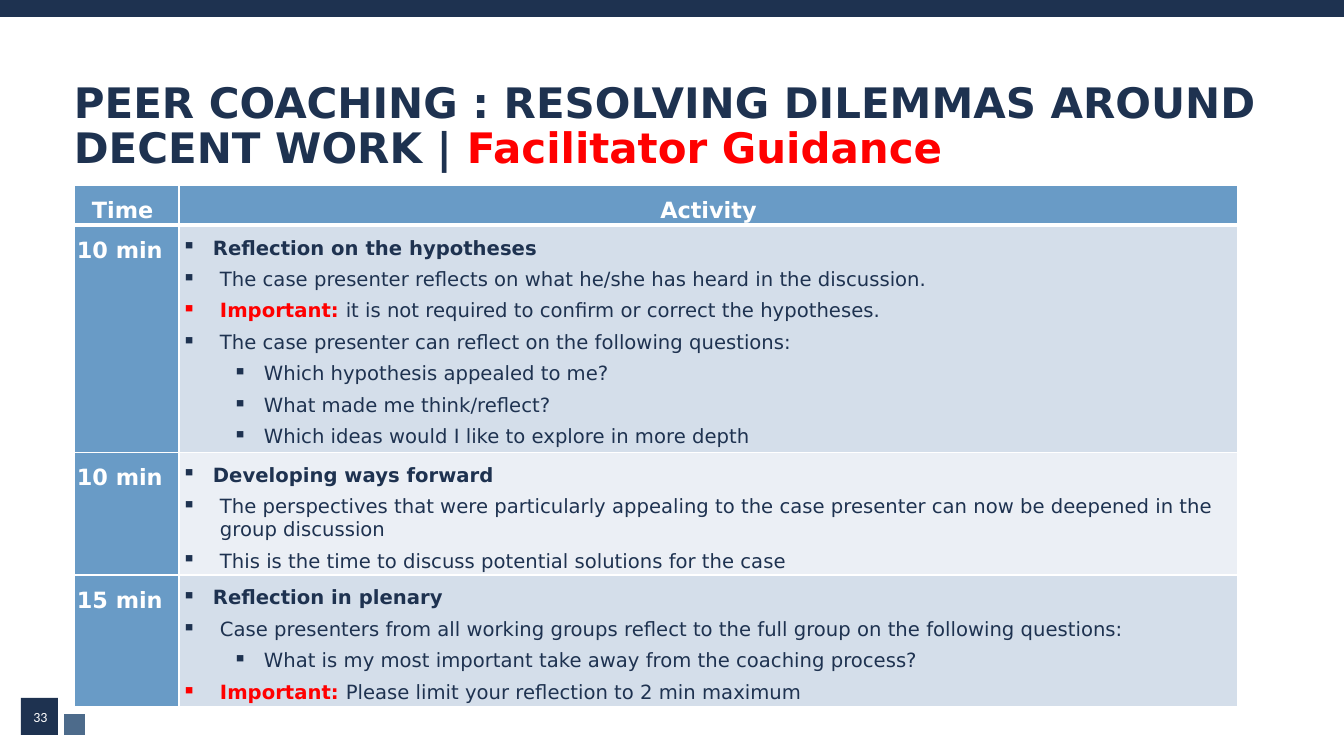
"""Build the facilitator guidance slide for the peer coaching session."""
from dataclasses import dataclass

import lxml.etree
import pptx
import pptx.dml.color
import pptx.enum.shapes
import pptx.enum.text
import pptx.oxml.ns
import pptx.slide
import pptx.table
import pptx.text.text
import pptx.util

PX = 914400 / 100.8
FONT = "DejaVu Sans"
COLORS = {
    "navy": "1E3250",
    "steel": "4D6B8B",
    "blue": "699BC6",
    "band": "D4DEEA",
    "pale": "EBEFF5",
    "red": "FF0000",
    "white": "FFFFFF",
}
ALIGN = pptx.enum.text.PP_ALIGN
ANCHOR = pptx.enum.text.MSO_ANCHOR


@dataclass(frozen=True)
class Block:
    left: int
    top: int
    width: int
    height: int
    color: str = "navy"


@dataclass(frozen=True)
class Point:
    text: str
    lead: str = ""
    level: int = 0


@dataclass(frozen=True)
class Session:
    time: str
    heading: str
    points: tuple[Point, ...]
    height: int
    color: str


DECORATIONS = (
    Block(0, 0, 1344, 17),
    Block(21, 698, 37, 37),
    Block(64, 714, 21, 21, "steel"),
)
TITLE = Block(64, 77, 1232, 67)
PAGE_NUMBER = Block(7, 705, 67, 23, "white")
AGENDA_LEFT, AGENDA_TOP = 74, 185
COLUMN_WIDTHS = (105, 1059)
HEADER_HEIGHT = 32
SESSIONS = (
    Session("10 min", "Reflection on the hypotheses", (
        Point("The case presenter reflects on what he/she has heard in the discussion."),
        Point("it is not required to confirm or correct the hypotheses.", lead="Important: "),
        Point("The case presenter can reflect on the following questions:"),
        Point("Which hypothesis appealed to me?", level=1),
        Point("What made me think/reflect?", level=1),
        Point("Which ideas would I like to explore in more depth", level=1),
    ), 218, "band"),
    Session("10 min", "Developing ways forward", (
        Point("The perspectives that were particularly appealing to the case presenter "
              "can now be deepened in the group discussion"),
        Point("This is the time to discuss potential solutions for the case"),
    ), 119, "pale"),
    Session("15 min", "Reflection in plenary", (
        Point("Case presenters from all working groups reflect to the full group "
              "on the following questions:"),
        Point("What is my most important take away from the coaching process?", level=1),
        Point("Please limit your reflection to 2 min maximum", lead="Important: "),
    ), 126, "band"),
)


def px(length: int) -> int:
    return round(length * PX)


def rgb(color: str) -> pptx.dml.color.RGBColor:
    return pptx.dml.color.RGBColor.from_string(COLORS[color])


def write(paragraph: pptx.text.text._Paragraph, text: str, *, size: int = 14,
          color: str = "navy", bold: bool = False, font: str = FONT) -> None:
    run = paragraph.add_run()
    run.text = text
    run.font.name = font
    run.font.size = pptx.util.Pt(size)
    run.font.bold = bold
    run.font.color.rgb = rgb(color)


def add_block(slide: pptx.slide.Slide, block: Block) -> None:
    shape = slide.shapes.add_shape(
        pptx.enum.shapes.MSO_SHAPE.RECTANGLE,
        px(block.left), px(block.top), px(block.width), px(block.height))
    shape.shadow.inherit = False
    shape.fill.solid()
    shape.fill.fore_color.rgb = rgb(block.color)
    shape.line.fill.background()


def add_text_frame(slide: pptx.slide.Slide, block: Block,
                   anchor: ANCHOR) -> pptx.text.text.TextFrame:
    frame = slide.shapes.add_textbox(
        px(block.left), px(block.top), px(block.width), px(block.height)).text_frame
    frame.word_wrap = True
    frame.vertical_anchor = anchor
    return frame


def style_cell(cell: pptx.table._Cell, color: str, top: int, bottom: int) -> None:
    cell.margin_left = cell.margin_right = px(3)
    cell.margin_top = cell.margin_bottom = 0
    properties = cell._tc.get_or_add_tcPr()
    qn = pptx.oxml.ns.qn
    for side, points in (("L", 1), ("R", 1), ("T", top), ("B", bottom)):
        border = lxml.etree.SubElement(
            properties, qn(f"a:ln{side}"), w=str(pptx.util.Pt(points)))
        fill = lxml.etree.SubElement(border, qn("a:solidFill"))
        lxml.etree.SubElement(fill, qn("a:srgbClr"), val=COLORS["white"])
    cell.fill.solid()
    cell.fill.fore_color.rgb = rgb(color)


def write_label(cell: pptx.table._Cell, text: str, align: ALIGN) -> None:
    paragraph = cell.text_frame.paragraphs[0]
    paragraph.alignment = align
    paragraph.line_spacing = 1.5
    paragraph.space_before = pptx.util.Pt(6)
    write(paragraph, text, size=16, color="white", bold=True)


def set_bullet(paragraph: pptx.text.text._Paragraph, margin: int, hanging: int) -> None:
    paragraph.space_before = pptx.util.Pt(6)
    properties = paragraph._p.get_or_add_pPr()
    properties.set("marL", str(px(margin)))
    properties.set("indent", str(-px(hanging)))
    lxml.etree.SubElement(properties, pptx.oxml.ns.qn("a:buChar"), char="▪")


def write_activity(cell: pptx.table._Cell, session: Session) -> None:
    heading = cell.text_frame.paragraphs[0]
    heading.line_spacing = 1.5
    set_bullet(heading, 31, 31)
    write(heading, session.heading, bold=True)
    for point in session.points:
        paragraph = cell.text_frame.add_paragraph()
        paragraph.level = point.level
        set_bullet(paragraph, *((82, 31) if point.level else (38, 38)))
        if point.lead:
            write(paragraph, point.lead, color="red", bold=True)
        write(paragraph, point.text)


def add_agenda(slide: pptx.slide.Slide) -> None:
    heights = (HEADER_HEIGHT, *(session.height for session in SESSIONS))
    agenda = slide.shapes.add_table(
        len(heights), len(COLUMN_WIDTHS), px(AGENDA_LEFT), px(AGENDA_TOP),
        px(sum(COLUMN_WIDTHS)), px(sum(heights))).table
    for column, width in zip(agenda.columns, COLUMN_WIDTHS):
        column.width = px(width)
    for row, height in zip(agenda.rows, heights):
        row.height = px(height)
    for column, label in enumerate(("Time ", "Activity")):
        style_cell(agenda.cell(0, column), "blue", 1, 3)
        write_label(agenda.cell(0, column), label, ALIGN.CENTER)
    for row, session in enumerate(SESSIONS, start=1):
        time, activity = agenda.cell(row, 0), agenda.cell(row, 1)
        top = 3 if row == 1 else 1
        style_cell(time, "blue", top, 1)
        style_cell(activity, session.color, top, 1)
        write_label(time, session.time, ALIGN.JUSTIFY)
        write_activity(activity, session)


def main() -> None:
    deck = pptx.Presentation()
    deck.slide_width, deck.slide_height = px(1344), px(756)
    slide = deck.slides.add_slide(deck.slide_layouts[6])
    for block in DECORATIONS:
        add_block(slide, block)
    title = add_text_frame(slide, TITLE, ANCHOR.TOP).paragraphs[0]
    title.line_spacing = 0.9
    write(title, "PEER COACHING : RESOLVING DILEMMAS AROUND DECENT WORK | ",
          size=30, bold=True)
    write(title, "Facilitator Guidance", size=30, color="red", bold=True)
    number = add_text_frame(slide, PAGE_NUMBER, ANCHOR.MIDDLE).paragraphs[0]
    number.alignment = ALIGN.CENTER
    write(number, "33", size=10, color=PAGE_NUMBER.color, font="Calibri")
    add_agenda(slide)
    deck.save("out.pptx")


if __name__ == "__main__":
    main()
